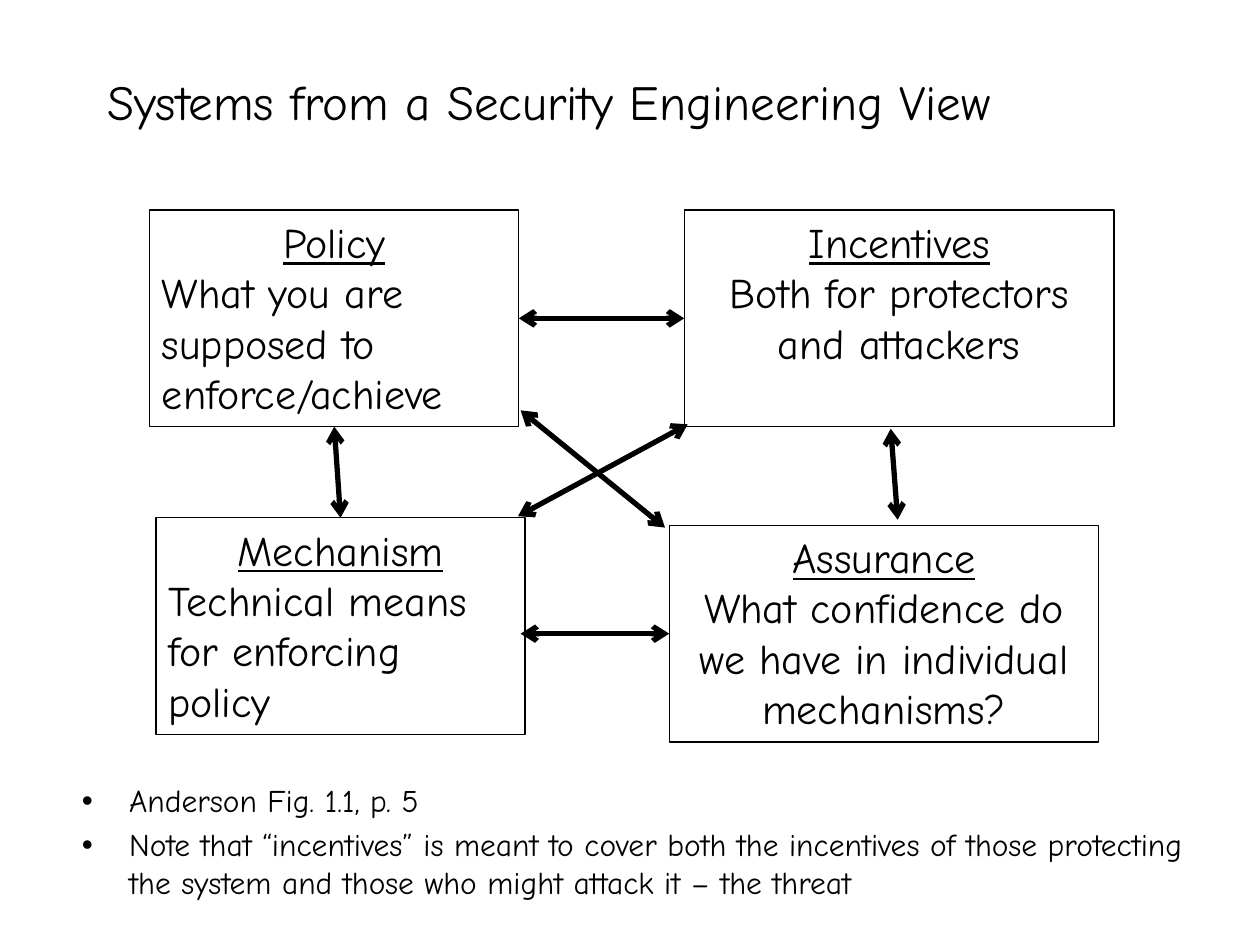
from lxml import etree
from pptx import Presentation
from pptx.dml.color import RGBColor
from pptx.enum.shapes import MSO_CONNECTOR, MSO_SHAPE
from pptx.enum.text import MSO_ANCHOR, MSO_AUTO_SIZE, PP_ALIGN
from pptx.oxml.ns import qn
from pptx.util import Pt

LEFT, CENTER = PP_ALIGN.LEFT, PP_ALIGN.CENTER
TOP, MIDDLE = MSO_ANCHOR.TOP, MSO_ANCHOR.MIDDLE
NO_AUTOFIT = MSO_AUTO_SIZE.NONE
RECTANGLE = MSO_SHAPE.RECTANGLE
STRAIGHT = MSO_CONNECTOR.STRAIGHT
SIDE_TOP, SIDE_LEFT, SIDE_BOTTOM, SIDE_RIGHT = range(4)

FONT = "Comic Neue"
BLACK = "000000"


def color(hex_string):
    return RGBColor.from_string(hex_string)


def place(shape, box):
    shape.left, shape.top, shape.width, shape.height = (Pt(value) for value in box)


def set_frame(frame, anchor):
    frame.word_wrap = True
    frame.auto_size = NO_AUTOFIT
    frame.vertical_anchor = anchor
    frame.margin_left = frame.margin_right = Pt(7.2)
    frame.margin_top = frame.margin_bottom = Pt(3.6)


def add_span(para, text, size, align=LEFT, underline=False):
    para.alignment = align
    span = para.add_run()
    span.text = text
    span.font.name = FONT
    span.font.size = Pt(size)
    span.font.underline = underline
    span.font.color.rgb = color(BLACK)


def add_title(page, box, text):
    title = page.shapes.title
    place(title, box)
    set_frame(title.text_frame, MIDDLE)
    add_span(title.text_frame.paragraphs[0], text, 28)


def add_notes_list(page, box, items):
    body = page.placeholders[1]
    place(body, box)
    frame = body.text_frame
    set_frame(frame, TOP)
    for index, item in enumerate(items):
        para = frame.add_paragraph() if index else frame.paragraphs[0]
        para.space_before = Pt(3.6)
        add_span(para, item, 18)
        # Hanging bullet
        properties = para._p.get_or_add_pPr()
        properties.set("marL", str(Pt(27)))
        properties.set("indent", str(Pt(-27)))
        etree.SubElement(properties, qn("a:buChar")).set("char", "•")


def add_concept(page, box, heading, text, align):
    concept = page.shapes.add_shape(RECTANGLE, *(Pt(value) for value in box))
    concept.shadow.inherit = False
    concept.fill.background()
    concept.line.color.rgb = color(BLACK)
    concept.line.width = Pt(0.75)
    frame = concept.text_frame
    set_frame(frame, TOP)
    add_span(frame.paragraphs[0], heading, 24, CENTER, underline=True)
    add_span(frame.add_paragraph(), text, 24, align)
    return concept


def add_arrow(page, start, end):
    """Each end is an (x, y) point or a (rectangle, side) pair to join."""
    arrow = page.shapes.add_connector(STRAIGHT, Pt(0), Pt(0), Pt(0), Pt(0))
    if isinstance(start[0], (int, float)):
        arrow.begin_x, arrow.begin_y = Pt(start[0]), Pt(start[1])
    else:
        arrow.begin_connect(*start)
    if isinstance(end[0], (int, float)):
        arrow.end_x, arrow.end_y = Pt(end[0]), Pt(end[1])
    else:
        arrow.end_connect(*end)
    arrow.line.color.rgb = color(BLACK)
    arrow.line.width = Pt(3)
    outline = arrow.line._get_or_add_ln()
    for tag in ("a:headEnd", "a:tailEnd"):
        etree.SubElement(outline, qn(tag)).set("type", "arrow")
    etree.SubElement(arrow._element.spPr, qn("a:effectLst"))


def add_diagram(page, box):
    left, top, width, height = box
    narrow, wide, tall = 211, 245.5, 123.8
    right, bottom = left + width, top + height

    # Four concepts, the lower row set slightly inwards
    policy = add_concept(page, (left, top, narrow, tall), "Policy",
                         "What you are supposed to enforce/achieve", LEFT)
    mechanism = add_concept(page, (left + 3.6, bottom - tall - 4.3, narrow, tall),
                            "Mechanism", "Technical means for enforcing policy", LEFT)
    incentives = add_concept(page, (right - wide, top, wide, tall), "Incentives",
                             "Both for protectors and attackers", CENTER)
    assurance = add_concept(page, (right - wide - 8.6, bottom - tall, wide, tall),
                            "Assurance",
                            "What confidence do we have in individual mechanisms?", CENTER)

    # Arrows along the sides
    add_arrow(page, (incentives, SIDE_LEFT), (policy, SIDE_RIGHT))
    add_arrow(page, (assurance, SIDE_LEFT), (left + 212, bottom - tall / 2))
    add_arrow(page, (policy, SIDE_BOTTOM), (mechanism, SIDE_TOP))
    add_arrow(page, (left + 423.5, top + 125), (left + 427.5, top + 177))

    # Crossing arrows
    add_arrow(page, (left + 307.5, top + 122.5), (left + 210.5, top + 175))
    add_arrow(page, (left + 212, top + 114.5), (left + 294.5, top + 181.5))


def main():
    deck = Presentation()
    deck.slide_width, deck.slide_height = Pt(720), Pt(540)
    page = deck.slides.add_slide(deck.slide_layouts[1])
    add_title(page, (54, 21.6, 612, 72), "Systems from a Security Engineering View")
    add_notes_list(page, (39.6, 442.8, 656.6, 70.6), [
        "Anderson Fig. 1.1, p. 5",
        "Note that “incentives” is meant to cover both the incentives of those "
        "protecting the system and those who might attack it – the threat",
    ])
    add_diagram(page, (85.5, 120, 551, 304))
    deck.save("out.pptx")


if __name__ == "__main__":
    main()
